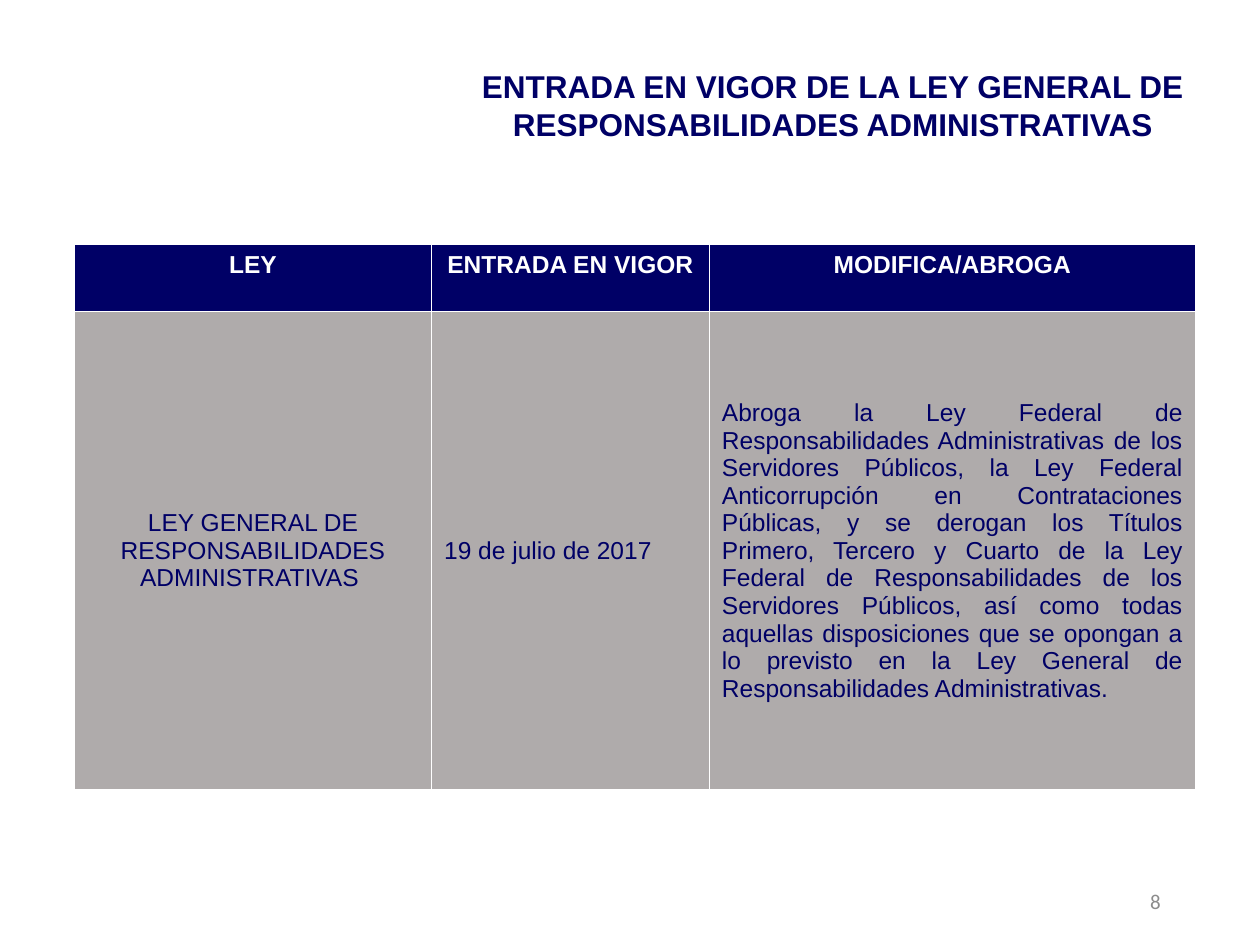
from pptx import Presentation
from pptx.dml.color import RGBColor
from pptx.enum import text
from pptx.util import Cm, Pt

NAVY = RGBColor(0x00, 0x00, 0x66)
WHITE = RGBColor(0xFF, 0xFF, 0xFF)
STONE = RGBColor(0xAF, 0xAB, 0xAB)
GRAY = RGBColor(0x8C, 0x8C, 0x8C)
LEFT, CENTER = text.PP_ALIGN.LEFT, text.PP_ALIGN.CENTER
RIGHT, JUSTIFY = text.PP_ALIGN.RIGHT, text.PP_ALIGN.JUSTIFY
TOP, MIDDLE = text.MSO_ANCHOR.TOP, text.MSO_ANCHOR.MIDDLE


def write(frame, words, size, color, align, bold=False, font="Arial"):
    paragraph = frame.paragraphs[0]
    paragraph.alignment = align
    run = paragraph.add_run()
    run.text = words
    run.font.name = font
    run.font.size = Pt(size)
    run.font.bold = bold
    run.font.color.rgb = color


presentation = Presentation()
presentation.slide_width, presentation.slide_height = Cm(25.4), Cm(19.05)
slide = presentation.slides.add_slide(presentation.slide_layouts[5])

# Title
title = slide.shapes.title
title.left, title.top, title.width, title.height = Cm(8.89), Cm(1.22), Cm(15.8), Cm(1.8)
title.text_frame.word_wrap = True
title.text_frame.auto_size = text.MSO_AUTO_SIZE.SHAPE_TO_FIT_TEXT
title.text_frame.vertical_anchor = TOP
write(title.text_frame,
      "ENTRADA EN VIGOR DE LA LEY GENERAL DE RESPONSABILIDADES ADMINISTRATIVAS",
      18, NAVY, CENTER, bold=True)

# Table of laws; the default table style draws the white rules
headers = ["LEY", "ENTRADA EN VIGOR", "MODIFICA/ABROGA"]
law = [
    "LEY GENERAL DE RESPONSABILIDADES ADMINISTRATIVAS ",
    "19 de julio de 2017",
    "Abroga la Ley Federal de Responsabilidades Administrativas de los Servidores "
    "Públicos, la Ley Federal Anticorrupción en Contrataciones Públicas, y se derogan "
    "los Títulos Primero, Tercero y Cuarto de la Ley Federal de Responsabilidades de "
    "los Servidores Públicos, así como todas aquellas disposiciones que se opongan a "
    "lo previsto en la Ley General de Responsabilidades Administrativas.",
]
rows = [
    (headers, Cm(1.35), NAVY, WHITE, True, TOP, [CENTER] * 3),
    (law, Cm(9.65), STONE, NAVY, False, MIDDLE, [CENTER, LEFT, JUSTIFY]),
]
table = slide.shapes.add_table(2, 3, Cm(1.5), Cm(4.93), Cm(22.6), Cm(11)).table
for column, width in zip(table.columns, [7.2, 5.6, 9.8]):
    column.width = Cm(width)
for row, (words, height, fill, color, bold, anchor, aligns) in zip(table.rows, rows):
    row.height = height
    for cell, content, align in zip(row.cells, words, aligns):
        cell.fill.solid()
        cell.fill.fore_color.rgb = fill
        cell.vertical_anchor = anchor
        write(cell.text_frame, content, 14, color, align, bold)

# Slide number
number = slide.shapes.add_textbox(Cm(17.93), Cm(17.65), Cm(5.72), Cm(1.02))
number.text_frame.word_wrap = True
number.text_frame.vertical_anchor = MIDDLE
write(number.text_frame, "8", 12, GRAY, RIGHT, font="Calibri")

presentation.save("out.pptx")
